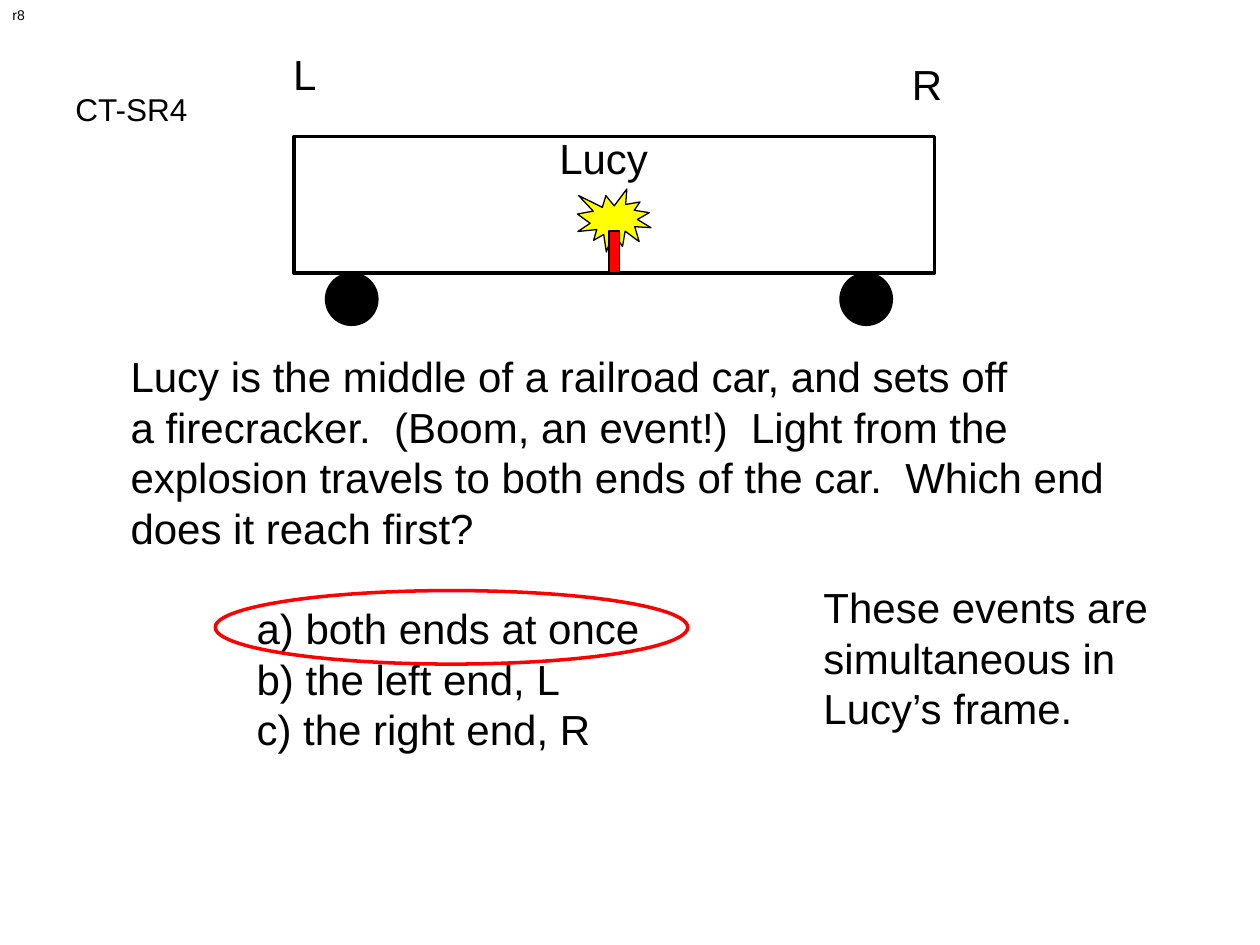
from dataclasses import dataclass
from typing import Optional

from pptx import Presentation
from pptx.dml.color import RGBColor
from pptx.enum import shapes, text
from pptx.util import Pt

KIND = shapes.MSO_SHAPE


@dataclass(frozen=True)
class Theme:
    font: str = "Arial"
    black: str = "000000"
    red: str = "FF0000"
    yellow: str = "FFFF00"
    tiny: float = 8
    label: float = 18
    body: float = 24
    leading: float = 1.2
    thin: float = 0.75
    thick: float = 2


THEME = Theme()


@dataclass(frozen=True)
class Box:
    left: float
    top: float
    width: float
    height: float

    def lengths(self) -> tuple:
        return Pt(self.left), Pt(self.top), Pt(self.width), Pt(self.height)


@dataclass(frozen=True)
class Figure:
    kind: KIND
    box: Box
    fill: Optional[str] = None
    line: str = THEME.black
    weight: float = THEME.thin


@dataclass(frozen=True)
class Para:
    words: str
    indent: float = 0
    before: float = 0


def draw_figure(s, fig: Figure) -> None:
    sp = s.shapes.add_shape(fig.kind, *fig.box.lengths())
    sp.shadow.inherit = False
    if fig.fill:
        sp.fill.solid()
        sp.fill.fore_color.rgb = RGBColor.from_string(fig.fill)
    else:
        sp.fill.background()
    sp.line.color.rgb = RGBColor.from_string(fig.line)
    sp.line.width = Pt(fig.weight)


def add_text(s, box: Box, *paras: Para, size: float = THEME.body,
             wrap: bool = False) -> None:
    tf = s.shapes.add_textbox(*box.lengths()).text_frame
    tf.word_wrap = wrap
    tf.auto_size = text.MSO_AUTO_SIZE.SHAPE_TO_FIT_TEXT
    for i, para in enumerate(paras):
        p = tf.add_paragraph() if i else tf.paragraphs[0]
        if wrap:
            p.line_spacing = Pt(size * THEME.leading)
        if para.before:
            p.space_before = Pt(para.before)
        if para.indent:
            p._p.get_or_add_pPr().set("marL", str(Pt(para.indent)))
        r = p.add_run()
        r.text = para.words
        r.font.name = THEME.font
        r.font.size = Pt(size)
        r.font.color.rgb = RGBColor.from_string(THEME.black)


def draw_car(s) -> None:
    """Draw the railroad car, its wheels, its labels and the firecracker."""
    car = Box(168, 78, 366, 78)
    wheel = 30
    for left in (186, 480):
        draw_figure(s, Figure(KIND.OVAL, Box(left, car.top + car.height, wheel, wheel),
                              THEME.black))
    draw_figure(s, Figure(KIND.RECTANGLE, car, weight=THEME.thick))
    add_text(s, Box(312.5, 72, 65.5, 36), Para("Lucy"))
    draw_figure(s, Figure(KIND.EXPLOSION1, Box(330, 108, 42, 36), THEME.yellow))
    draw_figure(s, Figure(KIND.RECTANGLE, Box(348, 132, 6, 24), THEME.red))
    add_text(s, Box(160.5, 24, 28, 36), Para("L"))
    add_text(s, Box(514, 30, 32, 36), Para("R"))


def draw_question(s) -> None:
    gap = THEME.body * THEME.leading
    options = ("a) both ends at once", "b) the left end, L", "c) the right end, R")
    add_text(
        s, Box(67.5, 197, 583, 240),
        Para("Lucy is the middle of a railroad car, and sets off"),
        Para("a firecracker.  (Boom, an event!)  Light from the explosion travels "
             "to both ends of the car.  Which end does it reach first?"),
        *(Para(words, indent=72, before=0 if i else gap)
          for i, words in enumerate(options)),
        wrap=True)
    draw_figure(s, Figure(KIND.OVAL, Box(123, 337.5, 270, 42),
                          line=THEME.red, weight=THEME.thick))
    add_text(s, Box(463.5, 329, 205, 94),
             Para("These events are simultaneous in Lucy’s frame."), wrap=True)


def main() -> None:
    prs = Presentation()
    prs.slide_width, prs.slide_height = Pt(720), Pt(540)
    s = prs.slides.add_slide(prs.slide_layouts[6])
    add_text(s, Box(0, 0, 26, 17), Para("r8"), size=THEME.tiny)
    draw_car(s)
    draw_question(s)
    add_text(s, Box(36, 48, 79, 29), Para("CT-SR4"), size=THEME.label)
    prs.save("out.pptx")


if __name__ == "__main__":
    main()
